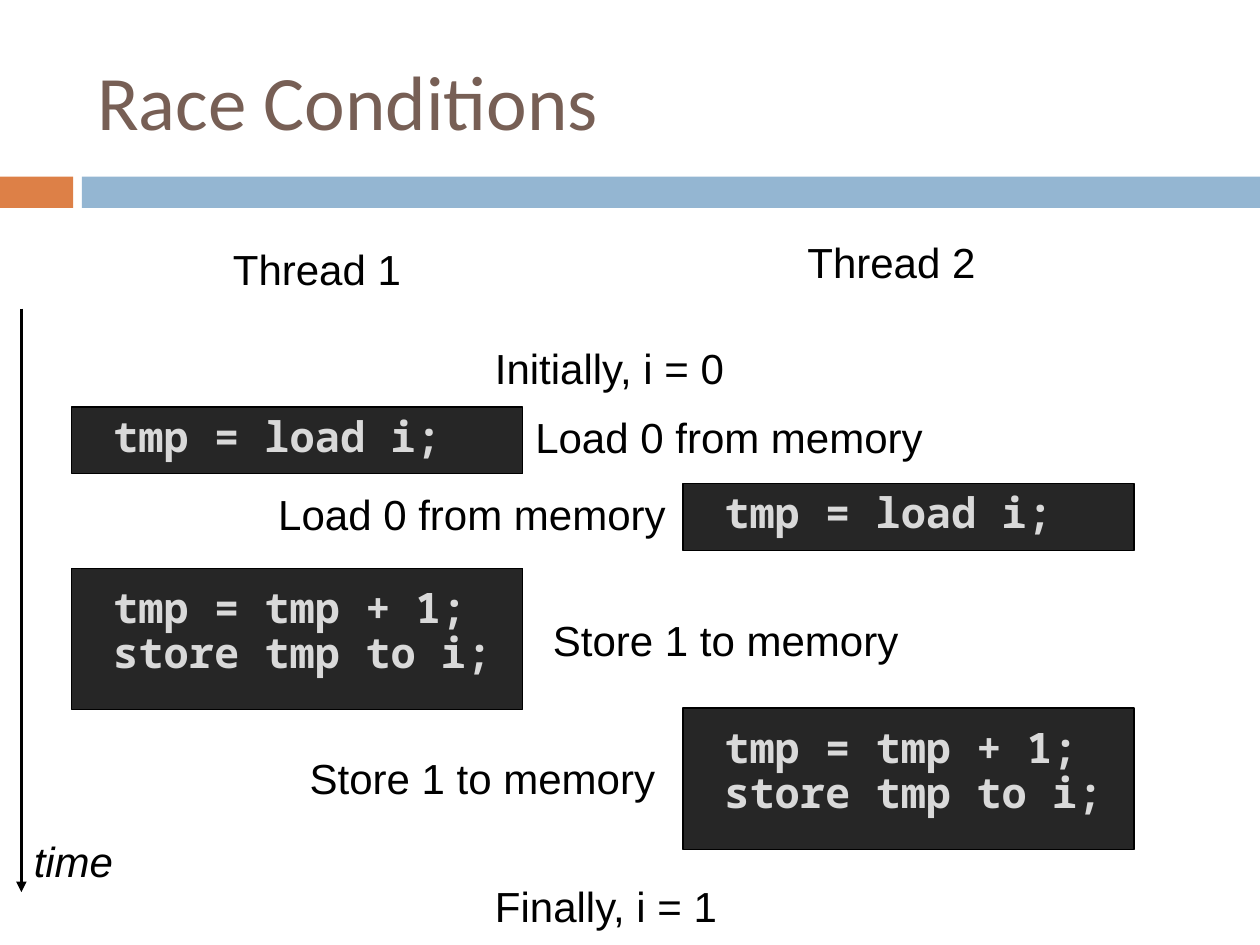
from lxml import etree
from pptx import Presentation
from pptx import util as u
from pptx.dml.color import RGBColor
from pptx.enum import shapes, text
from pptx.oxml.ns import qn

ORANGE = RGBColor(0xDD, 0x80, 0x47)
BLUE = RGBColor(0x94, 0xB6, 0xD2)
BROWN = RGBColor(0x77, 0x5F, 0x55)
CHARCOAL = RGBColor(0x26, 0x26, 0x26)
SILVER = RGBColor(0xD9, 0xD9, 0xD9)
BLACK = RGBColor(0, 0, 0)

WIDTH, HEIGHT = 10, 7.5
LEFT_THREAD, RIGHT_THREAD = 0.57, 5.42
CODE_WIDTH = 3.58
LABEL_HEIGHT = 0.5
LOAD = ["tmp = load i;"]
STORE = ["tmp = tmp + 1;", "store tmp to i;"]


def inches(*lengths):
    return [u.Inches(length) for length in lengths]


def style(frame, font, size, color, bold=False, italic=False):
    for paragraph in frame.paragraphs:
        for run in paragraph.runs:
            run.font.name = font
            run.font.size = u.Pt(size)
            run.font.color.rgb = color
            run.font.bold = bold
            run.font.italic = italic


def add_bar(parent, box, fill, outline=None):
    bar = parent.add_shape(shapes.MSO_SHAPE.RECTANGLE, *inches(*box))
    bar.shadow.inherit = False
    bar.fill.solid()
    bar.fill.fore_color.rgb = fill
    if outline is None:
        bar.line.fill.background()
    else:
        bar.line.color.rgb = outline
        bar.line.width = u.Pt(0.75)


def add_header(slide, box):
    left, top, width, height = box
    band_top, band_height = top + 0.85 * height, 0.15 * height
    add_bar(slide.shapes, (left, band_top, 0.058 * width, band_height), ORANGE)
    add_bar(slide.shapes, (left + 0.065 * width, band_top, 0.935 * width, band_height), BLUE)
    title = slide.shapes.title
    title.left, title.top, title.width, title.height = inches(left + 0.67, top + 0.25, 8.91, 1.08)
    title.text_frame.text = "Race Conditions"
    title.text_frame.vertical_anchor = text.MSO_ANCHOR.MIDDLE
    title.text_frame.paragraphs[0].alignment = text.PP_ALIGN.LEFT
    style(title.text_frame, "Calibri", 44, BROWN)


def add_label(slide, wording, box, italic=False):
    label = slide.shapes.add_textbox(*inches(*box, LABEL_HEIGHT))
    label.text_frame.text = wording
    label.text_frame.word_wrap = italic
    style(label.text_frame, "Arial", 24, BLACK, italic=italic)


def add_code(slide, lines, box):
    left, top, width, height = box
    block = slide.shapes.add_group_shape()
    add_bar(block.shapes, box, CHARCOAL, BLACK)
    margin = 0.1 if len(lines) > 1 else 0.02
    code = block.shapes.add_textbox(
        *inches(left + 0.23, top + margin, width - 0.23, height - 2 * margin))
    code.text_frame.text = "\n".join(lines)
    code.text_frame.word_wrap = True
    for paragraph in code.text_frame.paragraphs:
        paragraph.line_spacing = 0.9
    style(code.text_frame, "Noto Sans Mono", 24, SILVER, bold=True)


def add_timeline(slide, box):
    left, top, width, height = box
    arrow = slide.shapes.add_connector(
        shapes.MSO_CONNECTOR.STRAIGHT, *inches(left, top, left, top + height))
    arrow.line.color.rgb = BLACK
    arrow.line.width = u.Pt(1.75)
    etree.SubElement(arrow.line._get_or_add_ln(), qn("a:tailEnd"), type="triangle")
    etree.SubElement(arrow._element.spPr, qn("a:effectLst"))
    add_label(slide, "time", (left, top + height - LABEL_HEIGHT, width), italic=True)


def add_threads(slide):
    for lines, left, top, height in (
        (LOAD, LEFT_THREAD, 3.23, 0.53),
        (LOAD, RIGHT_THREAD, 3.84, 0.53),
        (STORE, LEFT_THREAD, 4.51, 1.12),
        (STORE, RIGHT_THREAD, 5.62, 1.12),
    ):
        add_code(slide, lines, (left, top, CODE_WIDTH, height))
    for wording, left, top, width in (
        ("Thread 1", 1.75, 1.88, 1.55),
        ("Thread 2", 6.31, 1.83, 1.55),
        ("Initially, i = 0", 3.83, 2.67, 2.04),
        ("Load 0 from memory", LEFT_THREAD + CODE_WIDTH, 3.22, 3.31),
        ("Load 0 from memory", RIGHT_THREAD - 3.31, 3.83, 3.31),
        ("Store 1 to memory", 4.29, 4.83, 2.97),
        ("Store 1 to memory", 2.36, 5.92, 2.97),
        ("Finally, i = 1", 3.83, 6.94, 1.98),
    ):
        add_label(slide, wording, (left, top, width))


def main():
    deck = Presentation()
    deck.slide_width, deck.slide_height = inches(WIDTH, HEIGHT)
    slide = deck.slides.add_slide(deck.slide_layouts[5])
    add_header(slide, (0, 0, WIDTH, 0.22 * HEIGHT))
    add_threads(slide)
    add_timeline(slide, (0.17, 2.45, 0.84, 4.63))
    deck.save("out.pptx")


if __name__ == "__main__":
    main()
